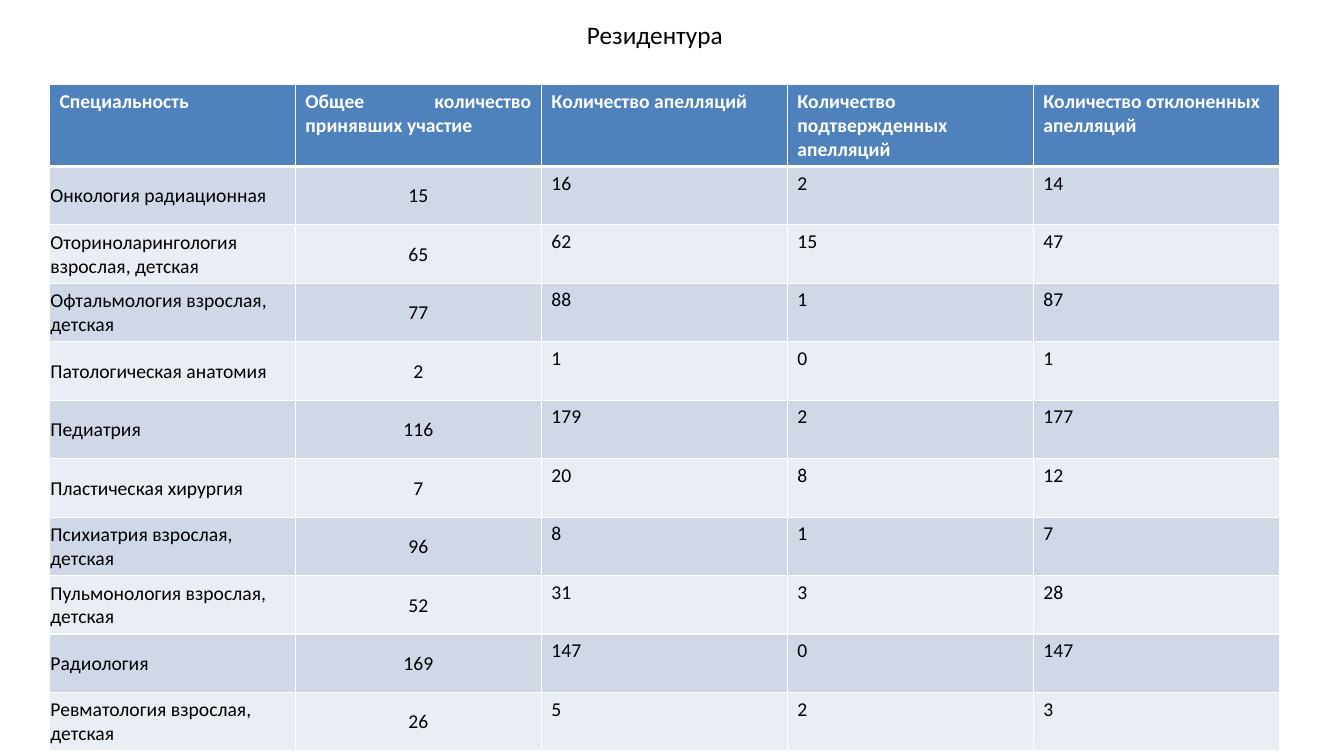
from lxml.etree import SubElement
from pptx import Presentation
from pptx.dml.color import RGBColor
from pptx.enum.text import MSO_ANCHOR as Anchor, PP_ALIGN as Align
from pptx.oxml.ns import qn
from pptx.util import Inches, Pt

WIDTH, HEIGHT = 13.33, 7.5
FONT = "Calibri"
BLACK = RGBColor(0x00, 0x00, 0x00)
WHITE = RGBColor(0xFF, 0xFF, 0xFF)
HEADER_BLUE = RGBColor(0x4F, 0x81, 0xBD)
BAND_DARK = RGBColor(0xD0, 0xD8, 0xE8)
BAND_LIGHT = RGBColor(0xE9, 0xED, 0xF4)

TITLE_BOX = (4.02, 0.14, 4.95, 0.4)
TABLE_BOX = (0.49, 0.84, 12.2, 6.38)

HEADERS = [
    "Специальность",
    "Общее количество принявших участие",
    "Количество апелляций",
    "Количество подтвержденных апелляций",
    "Количество отклоненных апелляций",
]
RESULTS = [
    ("Онкология радиационная", 15, 16, 2, 14),
    ("Оториноларингология взрослая, детская", 65, 62, 15, 47),
    ("Офтальмология взрослая, детская", 77, 88, 1, 87),
    ("Патологическая анатомия", 2, 1, 0, 1),
    ("Педиатрия", 116, 179, 2, 177),
    ("Пластическая хирургия", 7, 20, 8, 12),
    ("Психиатрия взрослая, детская", 96, 8, 1, 7),
    ("Пульмонология взрослая, детская", 52, 31, 3, 28),
    ("Радиология", 169, 147, 0, 147),
    ("Ревматология взрослая, детская", 26, 5, 2, 3),
]


def write_text(text_frame, text, size=14, color=BLACK, bold=False, align=Align.LEFT):
    """Put one formatted paragraph into a text frame."""
    text_frame.word_wrap = True
    paragraph = text_frame.paragraphs[0]
    paragraph.alignment = align
    run = paragraph.add_run()
    run.text = text
    run.font.name = FONT
    run.font.size = Pt(size)
    run.font.bold = bold
    run.font.color.rgb = color


def set_borders(cell, top=1, bottom=1):
    """Draw white borders around a cell, with widths in points."""
    properties = cell._tc.get_or_add_tcPr()
    for side, width in (("L", 1), ("R", 1), ("T", top), ("B", bottom)):
        line = SubElement(properties, qn(f"a:ln{side}"), w=str(Pt(width)))
        fill = SubElement(line, qn("a:solidFill"))
        SubElement(fill, qn("a:srgbClr"), val=str(WHITE))


def fill_cell(cell, color):
    """Give a cell a solid fill."""
    cell.fill.solid()
    cell.fill.fore_color.rgb = color


def add_title(slide, box, text):
    """Place the slide title in its box."""
    title = slide.shapes.title
    title.left, title.top, title.width, title.height = map(Inches, box)
    title.text_frame.vertical_anchor = Anchor.TOP
    write_text(title.text_frame, text, size=18, align=Align.CENTER)


def add_header_row(table):
    """Fill the blue row of column names."""
    for column, text in enumerate(HEADERS):
        cell = table.cell(0, column)
        set_borders(cell, bottom=3)
        fill_cell(cell, HEADER_BLUE)
        align = Align.JUSTIFY if column == 1 else Align.LEFT
        write_text(cell.text_frame, text, color=WHITE, bold=True, align=align)


def add_result_row(table, row, values):
    """Fill one banded row of results."""
    for column, value in enumerate(values):
        cell = table.cell(row, column)
        set_borders(cell, top=3 if row == 1 else 1)
        fill_cell(cell, BAND_DARK if row % 2 else BAND_LIGHT)
        if column < 2:
            cell.vertical_anchor = Anchor.MIDDLE
            cell.margin_left = cell.margin_right = cell.margin_top = Inches(0.01)
            cell.margin_bottom = 0
        align = Align.CENTER if column == 1 else Align.LEFT
        write_text(cell.text_frame, str(value), align=align)


def add_results_table(slide, box):
    """Place the table of appeals with equal rows and columns."""
    frame = slide.shapes.add_table(len(RESULTS) + 1, len(HEADERS), *map(Inches, box))
    table = frame.table
    add_header_row(table)
    for row, values in enumerate(RESULTS, start=1):
        add_result_row(table, row, values)


def main():
    """Build and save the presentation."""
    presentation = Presentation()
    presentation.slide_width = Inches(WIDTH)
    presentation.slide_height = Inches(HEIGHT)
    slide = presentation.slides.add_slide(presentation.slide_layouts[5])
    add_results_table(slide, TABLE_BOX)
    add_title(slide, TITLE_BOX, "Резидентура")
    presentation.save("out.pptx")


if __name__ == "__main__":
    main()
